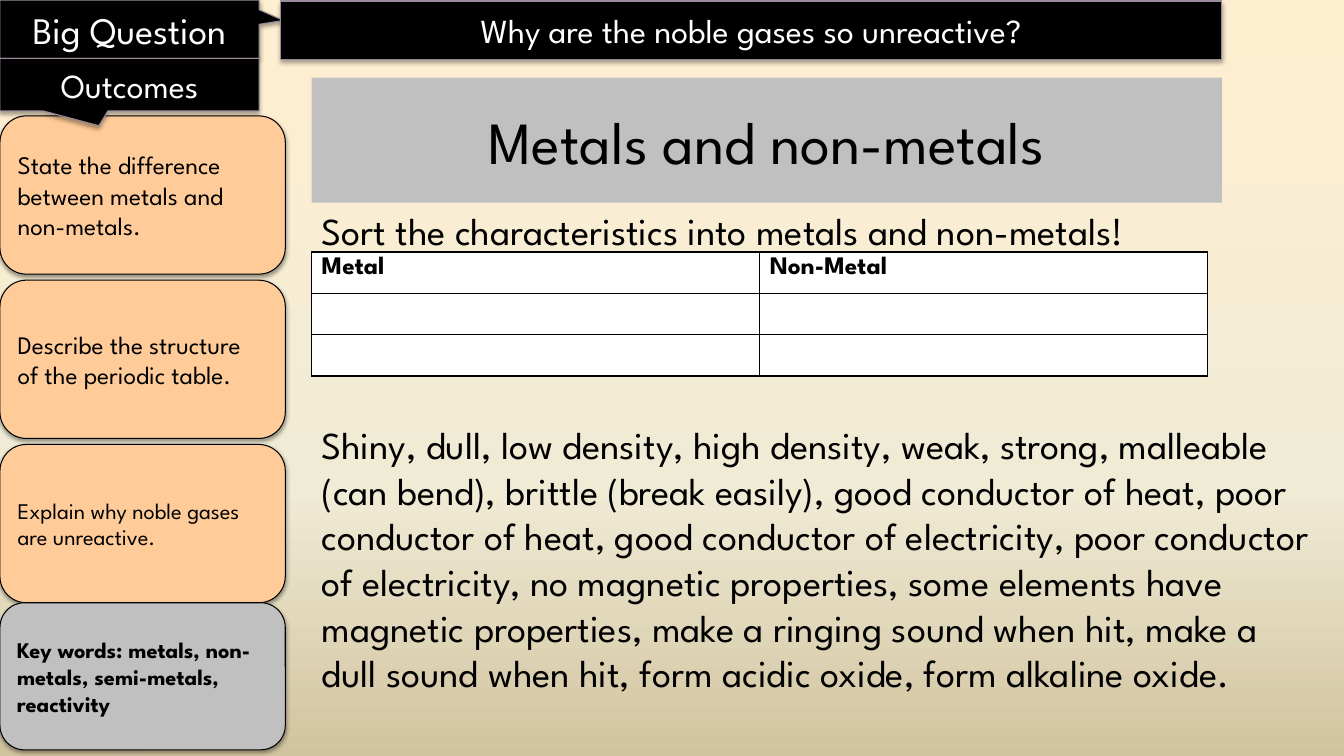
from copy import deepcopy
from pptx import Presentation
from pptx import util as u
from pptx.dml.color import RGBColor
from pptx.enum import shapes, text
from pptx.oxml import parse_xml
from pptx.oxml.ns import nsdecls, qn

FONT = "League Spartan"
WIDE, HIGH = 13.33, 7.5
SKY = [(0, "FFEFD1"), (0.65, "F0EBD5"), (1, "D1C39F")]
TITLE = "Metals and non-metals"
BODY = [
    "Sort the characteristics into metals and non-metals!",
    "Shiny, dull, low density, high density, weak, strong, malleable (can bend), "
    "brittle (break easily), good conductor of heat, poor conductor of heat, "
    "good conductor of electricity, poor conductor of electricity, "
    "no magnetic properties, some elements have magnetic properties, "
    "make a ringing sound when hit, make a dull sound when hit, "
    "form acidic oxide, form alkaline oxide.",
]
HEADS = ["Metal", "Non-Metal"]
ROWS = 3
GOALS = [
    ("State the difference between metals and non-metals.", 18),
    ("Describe the structure of the periodic table.", 18),
    ("Explain why noble gases are unreactive.", 16),
]
KEYS = "Key words: metals, non-metals, semi-metals, reactivity"

SIDE, TAB, MAIN = 2.83, 2.57, 3.09
BAR, CARD, STEP, TOP = 0.58, 1.57, 1.63, 1.15
RECT = shapes.MSO_SHAPE.RECTANGLE
ROUND = shapes.MSO_SHAPE.ROUNDED_RECTANGLE
CALL = shapes.MSO_SHAPE.RECTANGULAR_CALLOUT
LEFT, MID = text.PP_ALIGN.LEFT, text.PP_ALIGN.CENTER


def rgb(code):
    return RGBColor.from_string(code)


def paint(part, code):
    part.fill.solid()
    part.fill.fore_color.rgb = rgb(code)


def style(para, size, code="000000", bold=False, align=LEFT):
    para.alignment = align
    for run in para.runs:
        run.font.name = FONT
        run.font.size = u.Pt(size)
        run.font.bold = bold
        run.font.color.rgb = rgb(code)


def shade(shape, alpha, dist):
    shape.shadow.inherit = False
    shape._element.spPr.find(qn("a:effectLst")).append(parse_xml(
        f'<a:outerShdw {nsdecls("a")} blurRad="{u.Pt(3.1)}" dist="{u.Pt(dist)}" '
        f'dir="5400000" rotWithShape="0"><a:srgbClr val="000000">'
        f'<a:alpha val="{alpha * 1000}"/></a:srgbClr></a:outerShdw>'))


def block(slide, kind, area, words, size, fill, bold=False, tail=None):
    shape = slide.shapes.add_shape(kind, *map(u.Inches, area))
    dark = fill == "000000"
    for num, part in enumerate(tail or []):
        shape.adjustments[num] = part
    paint(shape, fill)
    shape.line.color.rgb = rgb("9A8C9D" if dark else "000000")
    shape.line.width = u.Pt(0.75)
    shade(shape, *((35, 1.8) if dark else (38, 1.6)))
    frame = shape.text_frame
    frame.text = words
    frame.vertical_anchor = text.MSO_ANCHOR.MIDDLE
    style(frame.paragraphs[0], size, "FFFFFF" if dark else "000000",
          bold, MID if dark else LEFT)


def sky(slide):
    fill = slide.background.fill
    fill.gradient()
    fill.gradient_angle = 270
    stops = slide._element.find(".//" + qn("a:gsLst"))
    stops.append(deepcopy(stops[-1]))
    for stop, (spot, code) in zip(fill.gradient_stops, SKY):
        stop.position = spot
        stop.color.rgb = rgb(code)


def head(slide):
    title = slide.shapes.title
    title.left, title.top = u.Inches(MAIN), u.Inches(0.77)
    title.width, title.height = u.Inches(9.03), u.Inches(1.24)
    paint(title, "C0C0C0")
    frame = title.text_frame
    frame.text = TITLE
    frame.auto_size = text.MSO_AUTO_SIZE.NONE
    frame.vertical_anchor = text.MSO_ANCHOR.MIDDLE
    style(frame.paragraphs[0], 42.7, align=MID)


def body(slide):
    box = slide.shapes.add_textbox(*map(u.Inches, (MAIN, 2.01, 10.09, 5.34)))
    frame = box.text_frame
    frame.word_wrap = True
    frame.text = "\n".join(BODY)
    for para in frame.paragraphs:
        style(para, 27.2)
    frame.paragraphs[1].space_before = u.Pt(120)


def border(cell):
    props = cell._tc.get_or_add_tcPr()
    for side in "LRTB":
        props.append(parse_xml(
            f'<a:ln{side} {nsdecls("a")} w="{u.Pt(1)}"><a:solidFill>'
            f'<a:srgbClr val="000000"/></a:solidFill></a:ln{side}>'))


def grid(slide):
    area = (MAIN, 2.5, 8.89, 0.41 * ROWS)
    table = slide.shapes.add_table(
        ROWS, len(HEADS), *map(u.Inches, area)).table
    for row in table.rows:
        for cell in row.cells:
            border(cell)
            paint(cell, "FFFFFF")
    for num, name in enumerate(HEADS):
        cell = table.cell(0, num)
        cell.text = name
        style(cell.text_frame.paragraphs[0], 18, bold=True)


def main():
    deck = Presentation()
    deck.slide_width, deck.slide_height = u.Inches(WIDE), u.Inches(HIGH)
    slide = deck.slides.add_slide(deck.slide_layouts[5])
    sky(slide)
    block(slide, CALL, (0, 0, TAB, BAR), "Big Question", 26.7, "000000",
          tail=(0.593, -0.15))
    block(slide, RECT, (2.78, 0.01, 9.34, BAR),
          "Why are the noble gases so unreactive?", 24, "000000")
    for num, (words, size) in enumerate(GOALS):
        block(slide, ROUND, (0, TOP + num * STEP, SIDE, CARD),
              words, size, "FFCC99")
    block(slide, ROUND, (0, 5.98, SIDE, 1.46), KEYS, 16, "C0C0C0", bold=True)
    block(slide, CALL, (0, BAR, TAB, 0.52), "Outcomes", 24, "000000",
          tail=(-0.118, 0.783))
    head(slide)
    body(slide)
    grid(slide)
    deck.save("out.pptx")


if __name__ == "__main__":
    main()
